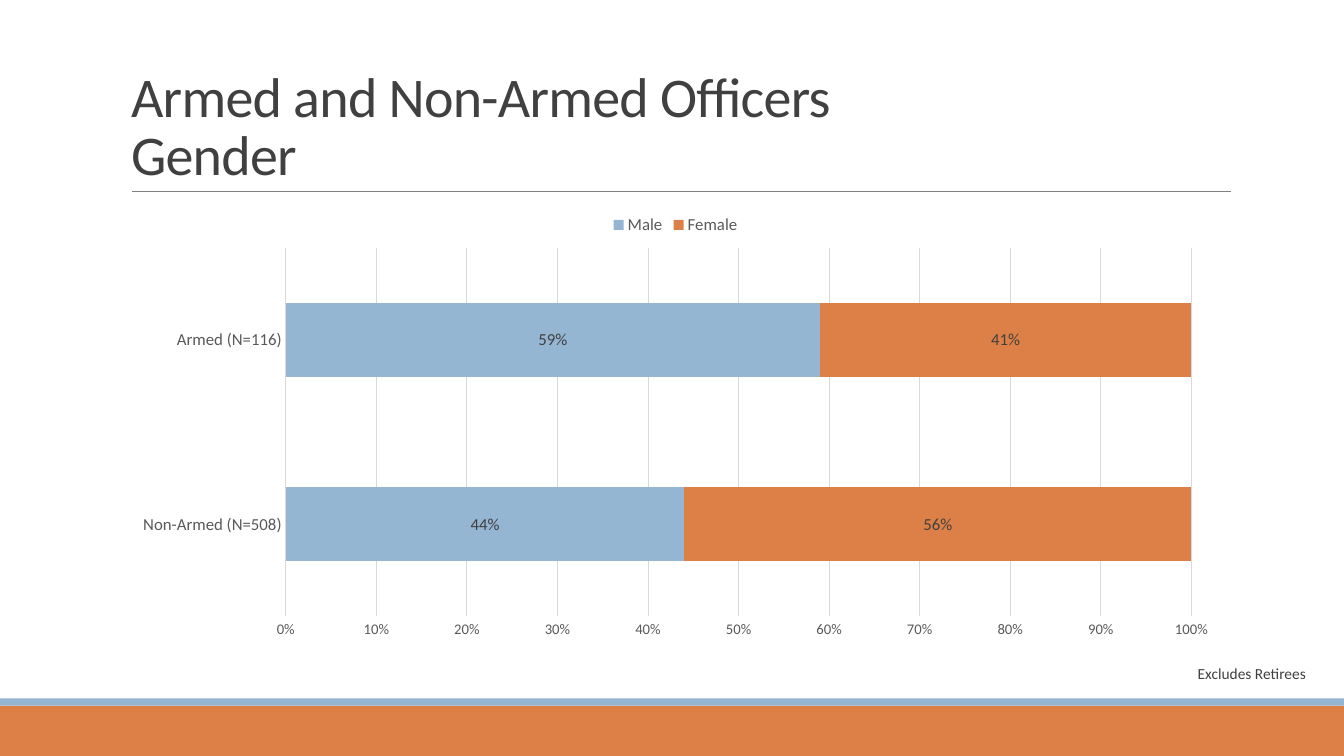
"""Builds a slide comparing the gender of armed and non-armed officers."""
from dataclasses import dataclass

from lxml.etree import SubElement
from pptx import Presentation
from pptx.chart.data import CategoryChartData
from pptx.dml.color import RGBColor
from pptx.enum.chart import XL_CHART_TYPE as ChartType
from pptx.enum.chart import XL_LABEL_POSITION as LabelPosition
from pptx.enum.chart import XL_LEGEND_POSITION as LegendPosition
from pptx.enum.chart import XL_TICK_MARK as TickMark
from pptx.enum.shapes import MSO_CONNECTOR as Connector
from pptx.enum.shapes import MSO_SHAPE as Shape
from pptx.enum.text import MSO_ANCHOR as Anchor
from pptx.enum.text import MSO_AUTO_SIZE as AutoSize
from pptx.enum.text import PP_ALIGN as Align
from pptx.oxml.ns import qn
from pptx.util import Inches, Pt


@dataclass(frozen=True)
class Theme:
    font: str = "Calibri"
    blue: str = "94B6D2"
    orange: str = "DD8047"
    text: str = "404040"
    axis_text: str = "595959"
    rule: str = "808080"
    grid: str = "D9D9D9"
    title_size: float = 40
    chart_size: float = 12
    scale_size: float = 10.5
    note_size: float = 11


class SlideBuilder:
    def __init__(self, slide, theme):
        self.slide = slide
        self.theme = theme

    def style_font(self, font, size, color):
        font.name = self.theme.font
        font.size = Pt(size)
        font.color.rgb = RGBColor.from_string(color)

    def style_line(self, line, color, width):
        line.color.rgb = RGBColor.from_string(color)
        line.width = Pt(width)

    def band(self, top, height, color):
        shape = self.slide.shapes.add_shape(
            Shape.RECTANGLE, 0, Inches(top), Inches(13.33), Inches(height))
        shape.shadow.inherit = False
        shape.fill.solid()
        shape.fill.fore_color.rgb = RGBColor.from_string(color)
        shape.line.fill.background()

    def rule(self, left, right, top):
        connector = self.slide.shapes.add_connector(
            Connector.STRAIGHT, Inches(left), Inches(top), Inches(right), Inches(top))
        self.style_line(connector.line, self.theme.rule, 0.5)
        SubElement(connector._element.spPr, qn("a:effectLst"))

    def title(self, text, left, top, width, height):
        shape = self.slide.shapes.title
        shape.left, shape.top = Inches(left), Inches(top)
        shape.width, shape.height = Inches(width), Inches(height)
        frame = shape.text_frame
        frame.text = text
        frame.auto_size = AutoSize.NONE
        frame.vertical_anchor = Anchor.BOTTOM
        paragraph = frame.paragraphs[0]
        paragraph.alignment = Align.LEFT
        paragraph.line_spacing = 0.85
        for run in paragraph.runs:
            self.style_font(run.font, self.theme.title_size, self.theme.text)
            run.font._element.set("spc", "-50")

    def note(self, text, left, top, width, height):
        shape = self.slide.shapes.add_textbox(
            Inches(left), Inches(top), Inches(width), Inches(height))
        frame = shape.text_frame
        frame.word_wrap = True
        frame.auto_size = AutoSize.SHAPE_TO_FIT_TEXT
        frame.text = text
        self.style_font(frame.paragraphs[0].runs[0].font,
                        self.theme.note_size, self.theme.text)

    def share_chart(self, categories, series, left, top, width, height):
        theme = self.theme
        data = CategoryChartData(number_format="0%")
        data.categories = categories
        for name, values, _ in series:
            data.add_series(name, values)
        chart = self.slide.shapes.add_chart(
            ChartType.BAR_STACKED_100, Inches(left), Inches(top),
            Inches(width), Inches(height), data).chart
        self.style_font(chart.font, theme.chart_size, theme.axis_text)
        chart.has_title = False
        chart.has_legend = True
        chart.legend.position = LegendPosition.TOP
        chart.legend.include_in_layout = False
        self.style_font(chart.legend.font, theme.chart_size, theme.axis_text)
        self.style_axes(chart)

        plot = chart.plots[0]
        plot.gap_width = 150
        plot.overlap = 100
        plot.vary_by_categories = False
        for bars, (_, _, color) in zip(plot.series, series):
            bars.format.fill.solid()
            bars.format.fill.fore_color.rgb = RGBColor.from_string(color)
            labels = bars.data_labels
            labels.show_value = True
            labels.number_format = "0%"
            labels.number_format_is_linked = False
            labels.position = LabelPosition.CENTER
            self.style_font(labels.font, theme.chart_size, theme.text)

    def style_axes(self, chart):
        theme = self.theme
        category_axis, value_axis = chart.category_axis, chart.value_axis
        sizes = (theme.chart_size, theme.scale_size)
        for axis, size in zip((category_axis, value_axis), sizes):
            axis.major_tick_mark = TickMark.NONE
            axis.minor_tick_mark = TickMark.NONE
            self.style_font(axis.tick_labels.font, size, theme.axis_text)
        self.style_line(category_axis.format.line, theme.grid, 0.75)
        value_axis.format.line.fill.background()
        value_axis.minimum_scale, value_axis.maximum_scale = 0, 1
        value_axis.major_unit = 0.1
        value_axis.tick_labels.number_format = "0%"
        value_axis.tick_labels.number_format_is_linked = False
        value_axis.has_major_gridlines = True
        self.style_line(value_axis.major_gridlines.format.line, theme.grid, 0.75)


def main():
    theme = Theme()
    presentation = Presentation()
    presentation.slide_width = Inches(13.33)
    presentation.slide_height = Inches(7.5)
    slide = presentation.slides.add_slide(presentation.slide_layouts[5])
    builder = SlideBuilder(slide, theme)

    builder.band(7, 0.5, theme.orange)
    builder.band(6.93, 0.07, theme.blue)
    builder.rule(1.31, 12.21, 1.9)
    builder.title("Armed and Non-Armed Officers \vGender", 1.2, 0.31, 11, 1.59)
    builder.share_chart(
        ["Non-Armed (N=508)", "Armed (N=116)"],
        [("Male", (0.44, 0.59), theme.blue),
         ("Female", (0.56, 0.41), theme.orange)],
        1.2, 2.02, 11, 4.4)
    builder.note("Excludes Retirees", 11.78, 6.54, 1.98, 0.29)
    presentation.save("out.pptx")


if __name__ == "__main__":
    main()
